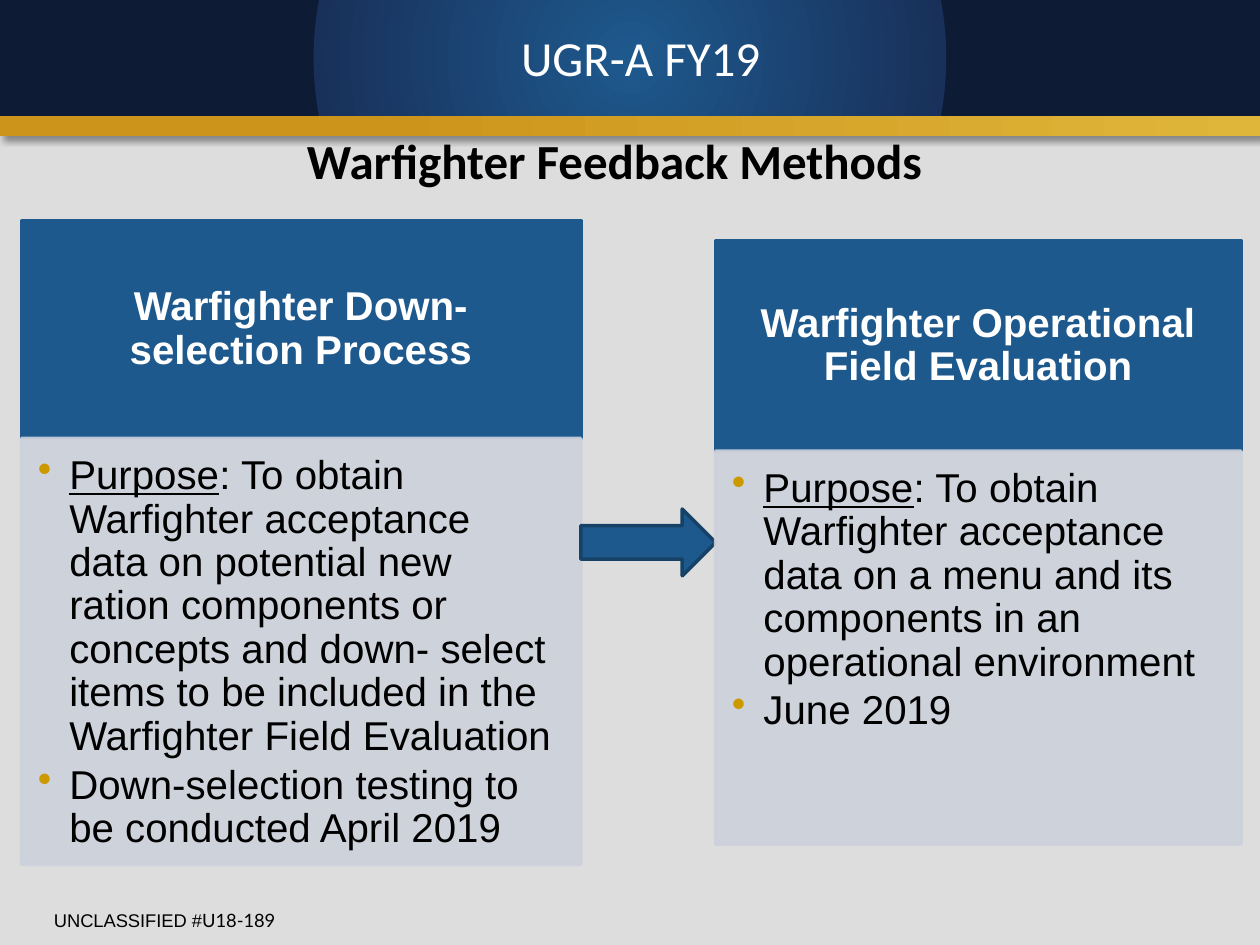
from lxml import etree
from pptx import Presentation
from pptx import util as u
from pptx.dml.color import RGBColor
from pptx.enum import shapes, text
from pptx.oxml import parse_xml
from pptx.oxml.ns import nsdecls, qn

BACKGROUND = RGBColor(0xDD, 0xDD, 0xDD)
BLUE = RGBColor(0x1E, 0x59, 0x8D)
DARK_BLUE = RGBColor(0x16, 0x42, 0x68)
PALE = RGBColor(0xCD, 0xD1, 0xDB)
GOLD = RGBColor(0xCC, 0x99, 0x00)
BLACK = RGBColor(0, 0, 0)
WHITE = RGBColor(0xFF, 0xFF, 0xFF)

GOLD_STOPS = [(0, "DFB63A"), (70, "CD941B")]
NAVY_STOPS = [(0, "1E598D"), (50, "18305A"), (50, "0E1B35")]
LINEAR = '<a:lin ang="10800000" scaled="0"/>'
RADIAL = ('<a:path path="circle"><a:fillToRect l="50000" t="50000" '
          'r="50000" b="50000"/></a:path>')


def add_box(slide, kind, box, fill=None, line=None):
    sp = slide.shapes.add_shape(kind, *map(u.Inches, box))
    sp.shadow.inherit = False
    if fill is not None:
        sp.fill.solid()
        sp.fill.fore_color.rgb = fill
    if line is None:
        sp.line.fill.background()
    else:
        sp.line.color.rgb = line
        sp.line.width = u.Pt(2)
    return sp


def add_band(slide, top, height, stops, direction):
    sp = add_box(slide, shapes.MSO_SHAPE.RECTANGLE, (0, top, 10, height))
    colors = "".join(f'<a:gs pos="{pos * 1000}"><a:srgbClr val="{rgb}"/></a:gs>'
                     for pos, rgb in stops)
    gradient = parse_xml(f'<a:gradFill {nsdecls("a")} rotWithShape="1">'
                         f'<a:gsLst>{colors}</a:gsLst>{direction}</a:gradFill>')
    sp._element.spPr.find(qn("a:prstGeom")).addnext(gradient)
    return sp


def add_shadow(sp):
    effects = sp._element.spPr.find(qn("a:effectLst"))
    effects.append(parse_xml(
        f'<a:outerShdw {nsdecls("a")} blurRad="50800" dist="38100" dir="2700000" '
        'algn="tl" rotWithShape="0"><a:srgbClr val="000000">'
        '<a:alpha val="40000"/></a:srgbClr></a:outerShdw>'))


def set_frame(tf, insets, anchor=text.MSO_ANCHOR.TOP):
    tf.word_wrap = True
    tf.vertical_anchor = anchor
    tf.margin_left, tf.margin_top, tf.margin_right, tf.margin_bottom = map(u.Inches, insets)


def add_run(p, words, size, color, font="Arial", bold=False, underline=False):
    r = p.add_run()
    r.text = words
    r.font.name = font
    r.font.size = u.Pt(size)
    r.font.color.rgb = color
    r.font.bold = bold
    r.font.underline = underline


def add_label(slide, box, align=text.PP_ALIGN.LEFT):
    tf = slide.shapes.add_textbox(*map(u.Inches, box)).text_frame
    set_frame(tf, (0.1, 0.05, 0.1, 0.05))
    p = tf.paragraphs[0]
    p.alignment = align
    return p


def add_bullet(p):
    pPr = p._p.get_or_add_pPr()
    pPr.set("marL", str(u.Inches(0.25)))
    pPr.set("indent", str(u.Inches(-0.25)))
    color = etree.SubElement(pPr, qn("a:buClr"))
    etree.SubElement(color, qn("a:srgbClr"), val=str(GOLD))
    etree.SubElement(pPr, qn("a:buChar"), char="•")
    p.alignment = text.PP_ALIGN.LEFT
    p.line_spacing = 0.9
    p.space_after = u.Pt(3)


def add_panel(slide, left, top, width, head_height, body_height, heading, purpose, date):
    # Heading block
    head = add_box(slide, shapes.MSO_SHAPE.RECTANGLE,
                   (left, top, width, head_height), BLUE, BLUE)
    set_frame(head.text_frame, (0.18, 0.1, 0.18, 0.1), text.MSO_ANCHOR.MIDDLE)
    p = head.text_frame.paragraphs[0]
    p.alignment = text.PP_ALIGN.CENTER
    p.line_spacing = 0.9
    add_run(p, heading, 23, WHITE, bold=True)

    # Body block, slightly see-through
    body = add_box(slide, shapes.MSO_SHAPE.RECTANGLE,
                   (left, top + head_height, width, body_height), PALE, PALE)
    for color in body._element.spPr.iter(qn("a:srgbClr")):
        etree.SubElement(color, qn("a:alpha"), val="90000")
    tf = body.text_frame
    set_frame(tf, (0.13, 0.13, 0.18, 0.2))
    p = tf.paragraphs[0]
    add_bullet(p)
    add_run(p, "Purpose", 23, BLACK, underline=True)
    add_run(p, ": To obtain Warfighter acceptance data on " + purpose, 23, BLACK)
    p = tf.add_paragraph()
    add_bullet(p)
    add_run(p, date, 23, BLACK)


def main():
    prs = Presentation()
    prs.slide_width, prs.slide_height = u.Inches(10), u.Inches(7.5)
    s = prs.slides.add_slide(prs.slide_layouts[6])
    s.background.fill.solid()
    s.background.fill.fore_color.rgb = BACKGROUND

    # Header bands
    add_shadow(add_band(s, 0.83, 0.25, GOLD_STOPS, LINEAR))
    add_band(s, 0, 0.92, NAVY_STOPS, RADIAL)

    # Marking, title and subtitle
    p = add_label(s, (0.33, 7.2, 2.92, 0.24))
    p.line_spacing = 0.8
    add_run(p, "UNCLASSIFIED #", 10.5, BLACK)
    add_run(p, "U18-189", 10.5, BLACK, "Lato")
    p = add_label(s, (1.25, 0.17, 7.67, 0.57), text.PP_ALIGN.CENTER)
    add_run(p, "UGR-A FY19", 28, WHITE, "Calibri")
    p = add_label(s, (2.25, 0.99, 6.58, 0.57))
    add_run(p, " Warfighter Feedback Methods", 28, BLACK, "Calibri", bold=True)

    # Two panels joined by an arrow
    add_panel(s, 0.17, 1.75, 4.44, 1.73, 3.38,
              "Warfighter Down- selection Process",
              "potential new ration components or concepts and down- select "
              "items to be included in the Warfighter Field Evaluation",
              "Down-selection testing to be conducted April 2019")
    add_box(s, shapes.MSO_SHAPE.RIGHT_ARROW, (4.61, 4.04, 1.07, 0.53), BLUE, DARK_BLUE)
    add_panel(s, 5.68, 1.91, 4.17, 1.67, 3.12,
              "Warfighter Operational Field Evaluation",
              "a menu and its components in an operational environment",
              "June 2019")

    prs.save("out.pptx")


if __name__ == "__main__":
    main()
